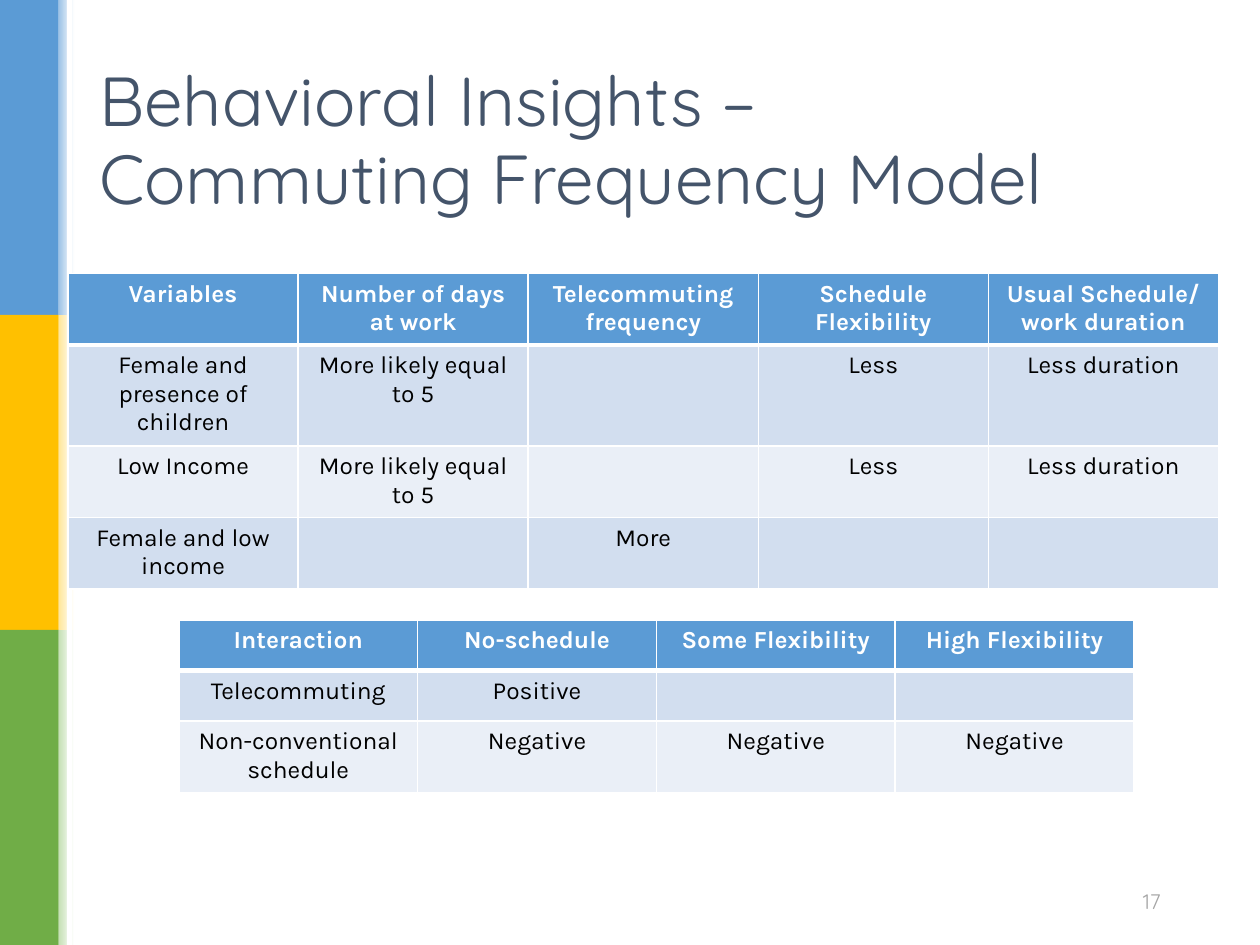
from collections import namedtuple

from lxml import etree
from pptx import Presentation
from pptx import util as u
from pptx.dml.color import RGBColor
from pptx.enum import shapes, text
from pptx.oxml.ns import qn

# The slide is a grid of 100 columns by 75 rows; boxes are given in grid units.
SLIDE_WIDTH, SLIDE_HEIGHT = u.Inches(10), u.Inches(7.5)
COLUMN, ROW = SLIDE_WIDTH / 100, SLIDE_HEIGHT / 75
Box = namedtuple("Box", "left top width height")

COLORS = {
    "blue": "5B9BD5", "light_blue": "9DC3E6",
    "yellow": "FFC000", "light_yellow": "FFE699",
    "green": "70AD47", "light_green": "C5E0B4",
    "white": "FFFFFF", "black": "000000",
    "title": "44546A", "number": "A5A5A5",
    "odd_row": "D2DEEF", "even_row": "EAEFF7",
}

VARIABLES = [
    ["Variables", "Number of days at work", "Telecommuting frequency",
     "Schedule Flexibility", "Usual Schedule/ work duration"],
    ["Female and presence of children", "More likely equal to 5", "", "Less", "Less duration"],
    ["Low Income", "More likely equal to 5", "", "Less", "Less duration"],
    ["Female and low income", "", "More", "", ""],
]
INTERACTIONS = [
    ["Interaction", "No-schedule", "Some Flexibility", "High Flexibility"],
    ["Telecommuting", "Positive", "", ""],
    ["Non-conventional schedule", "Negative", "Negative", "Negative"],
]


def color(name):
    return RGBColor.from_string(COLORS[name])


def place(box):
    return [u.Emu(round(length)) for length in (
        box.left * COLUMN, box.top * ROW, box.width * COLUMN, box.height * ROW)]


def style(paragraph, font_name, size, color_name, bold=False):
    for run in paragraph.runs:
        run.font.name = font_name
        run.font.size = u.Pt(size)
        run.font.bold = bold
        run.font.color.rgb = color(color_name)


def add_rectangle(slide, box, color_name, fade_to=None):
    shape = slide.shapes.add_shape(shapes.MSO_SHAPE.RECTANGLE, *place(box))
    shape.shadow.inherit = False
    shape.line.fill.background()
    if fade_to:
        shape.fill.gradient()
        shape.fill.gradient_angle = 0
        for stop, name in zip(shape.fill.gradient_stops, (color_name, fade_to)):
            stop.color.rgb = color(name)
    else:
        shape.fill.solid()
        shape.fill.fore_color.rgb = color(color_name)


def add_side_bar(slide, box):
    """Three stacked bands, each fading out on its right, and a white strip."""
    band_height = box.height / 3
    band_width = box.width * 0.79
    for index, name in enumerate(("blue", "yellow", "green")):
        top = box.top + index * band_height
        add_rectangle(slide, Box(box.left + band_width, top, box.width - band_width, band_height),
                      "light_" + name, "white")
        add_rectangle(slide, Box(box.left, top, band_width, band_height), name)
    add_rectangle(slide, Box(box.left + box.width * 0.9, box.top, 0.4, box.height), "white")


def add_text(slide, box, words, size, color_name, alignment, line_spacing=1.0):
    text_frame = slide.shapes.add_textbox(*place(box)).text_frame
    text_frame.word_wrap = True
    text_frame.vertical_anchor = text.MSO_ANCHOR.MIDDLE
    text_frame.text = words
    paragraph = text_frame.paragraphs[0]
    paragraph.alignment = alignment
    paragraph.line_spacing = line_spacing
    style(paragraph, "Quicksand", size, color_name)


def add_borders(cell, widths):
    properties = cell._tc.get_or_add_tcPr()
    for side, width in zip("LRTB", widths):
        line = etree.SubElement(properties, qn("a:ln" + side), w=str(u.Pt(width)))
        fill = etree.SubElement(line, qn("a:solidFill"))
        etree.SubElement(fill, qn("a:srgbClr"), val=COLORS["white"])


def add_banded_table(slide, box, rows, row_shares):
    """Header row over banded rows; row_shares divide the height of the box."""
    table = slide.shapes.add_table(len(rows), len(rows[0]), *place(box)).table
    for row_index, (words_in_row, share) in enumerate(zip(rows, row_shares)):
        table.rows[row_index].height = u.Emu(round(box.height * ROW * share / sum(row_shares)))
        is_header = row_index == 0
        fill_name = "blue" if is_header else "odd_row" if row_index % 2 else "even_row"
        for column_index, words in enumerate(words_in_row):
            cell = table.cell(row_index, column_index)
            add_borders(cell, (1, 1, 3 if row_index == 1 else 1, 3 if is_header else 1))
            cell.fill.solid()
            cell.fill.fore_color.rgb = color(fill_name)
            cell.text_frame.text = words
            paragraph = cell.text_frame.paragraphs[0]
            paragraph.alignment = text.PP_ALIGN.CENTER
            style(paragraph, "Karla", 14, "white" if is_header else "black", is_header)


def main():
    presentation = Presentation()
    presentation.slide_width, presentation.slide_height = SLIDE_WIDTH, SLIDE_HEIGHT
    slide = presentation.slides.add_slide(presentation.slide_layouts[6])

    # Coloured bar on the left edge
    add_side_bar(slide, Box(0, 0, 5.9, 75))

    # Title and slide number
    add_text(slide, Box(6.9, 4, 86.2, 14.5), "Behavioral Insights –\vCommuting Frequency Model",
             39.6, "title", text.PP_ALIGN.LEFT, 0.95)
    add_text(slide, Box(66.2, 69.5, 26.9, 4), "17", 12, "number", text.PP_ALIGN.RIGHT)

    # Tables
    add_banded_table(slide, Box(5.4, 21.7, 91.3, 24.3), VARIABLES, (54, 78, 56, 55))
    add_banded_table(slide, Box(14.2, 49.2, 75.8, 13.6), INTERACTIONS, (40, 40, 56))

    presentation.save("out.pptx")


if __name__ == "__main__":
    main()
